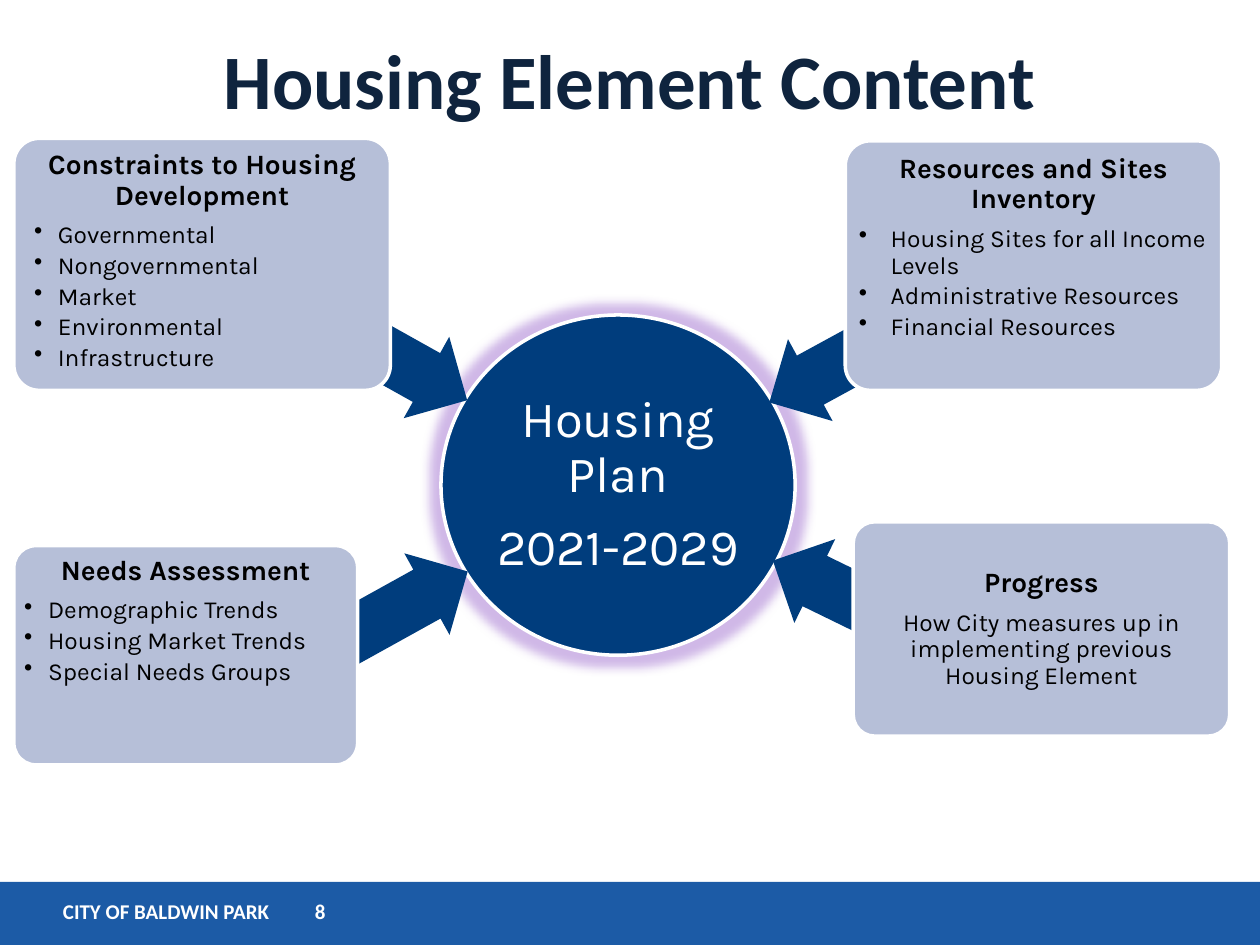
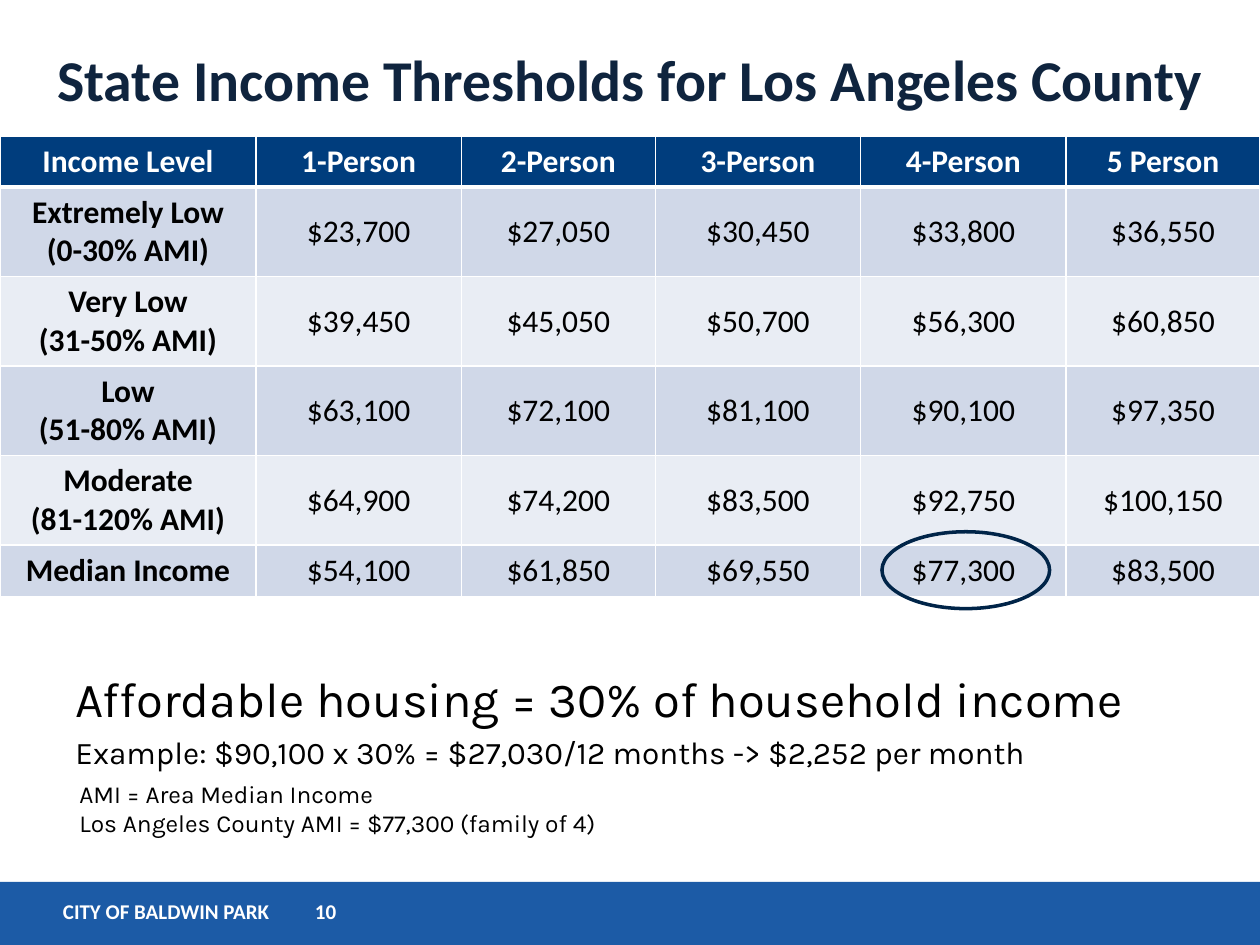
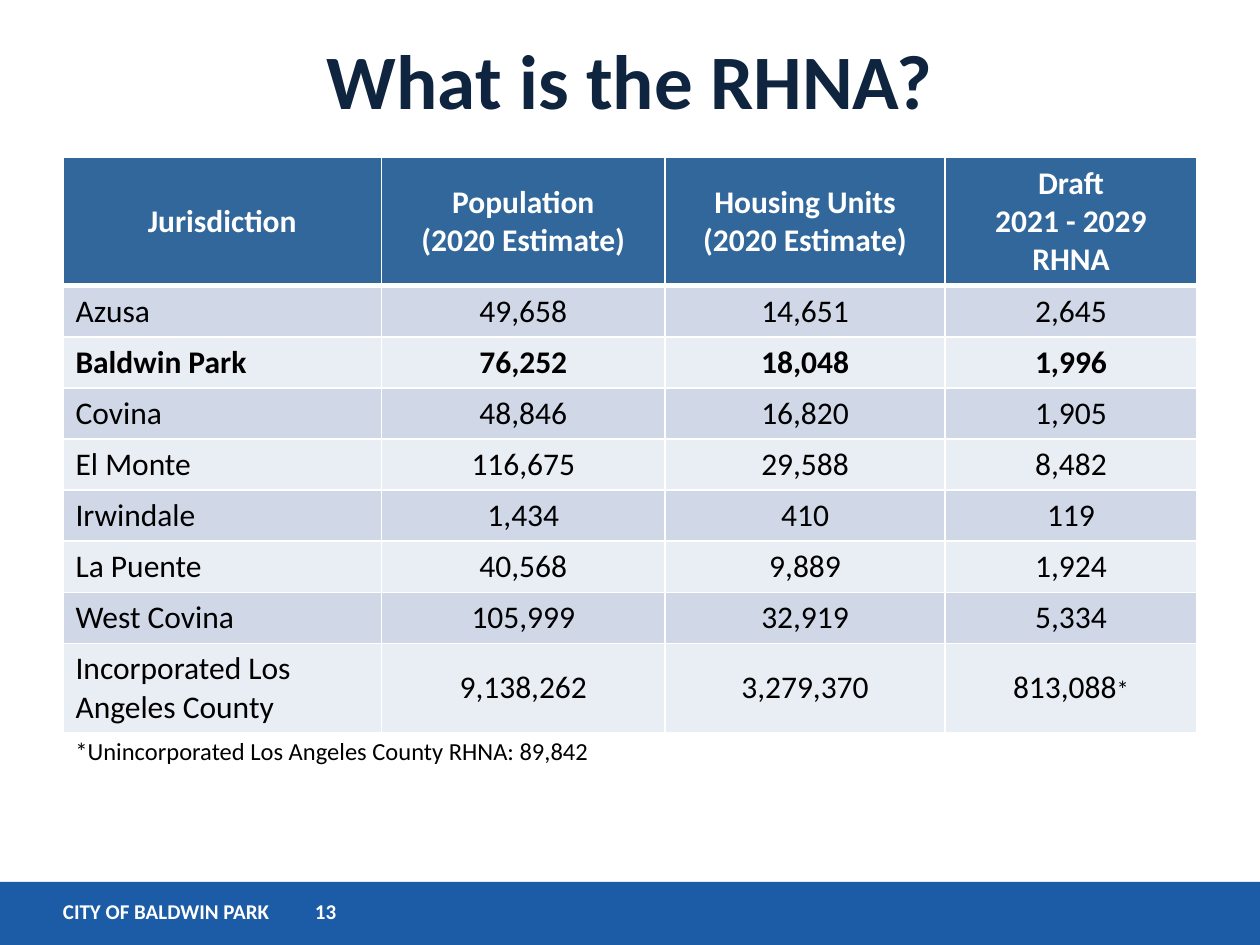
from lxml.etree import SubElement
from pptx import Presentation
from pptx.dml.color import RGBColor
from pptx.enum.shapes import MSO_SHAPE as SHAPE
from pptx.enum.text import MSO_ANCHOR as ANCHOR, MSO_AUTO_SIZE as AUTOSIZE, PP_ALIGN as ALIGN
from pptx.oxml.ns import qn
from pptx.util import Cm, Pt

NAVY, TITLE, BAND = "003D7D", "0F243E", "1C5BA6"
STEEL, CARD, RING, GLOW = "31679B", "B6BFD8", "002448", "8A4FC4"
ROWS = ("D0D8E8", "E9EDF4")
WHITE, BLACK = "FFFFFF", "000000"
HEAD_FONT, BODY_FONT = "Calibri", "Karla"


def rgb(value):
    return RGBColor.from_string(value)


def solid_xml(parent, color):
    return SubElement(SubElement(parent, qn("a:solidFill")), qn("a:srgbClr"), val=color)


def add_run(p, text, size=18, font=BODY_FONT, color=BLACK, bold=False):
    r = p.add_run()
    r.text = text
    r.font.size, r.font.name, r.font.bold = Pt(size), font, bold
    r.font.color.rgb = rgb(color)


def add_text(tf, text, align=ALIGN.LEFT, line=None, before=0, after=0,
             bullet=None, indent=0, hang=0, tab=None, **font):
    """Add one paragraph, using the first one while it is empty."""
    p = tf.paragraphs[0] if not tf.text else tf.add_paragraph()
    p.alignment, p.line_spacing = align, line
    p.space_before, p.space_after = Pt(before), Pt(after)
    ppr = p._p.get_or_add_pPr()
    ppr.set("marL", str(Cm(indent)))
    ppr.set("indent", str(-Cm(hang)))
    if bullet:
        SubElement(ppr, qn("a:buChar"), char=bullet)
    else:
        SubElement(ppr, qn("a:buNone"))
    if tab:
        SubElement(SubElement(ppr, qn("a:tabLst")), qn("a:tab"), pos=str(Cm(tab)), algn="l")
    add_run(p, text, **font)
    return p


class Deck:
    def __init__(self):
        self.prs = Presentation()
        self.prs.slide_width, self.prs.slide_height = Cm(25.4), Cm(19.05)
        self.s = None

    def place(self, sp, box):
        sp.left, sp.top, sp.width, sp.height = (Cm(v) for v in box)

    def frame(self, sp, inset=(0.25, 0.13), anchor=ANCHOR.TOP, wrap=True):
        tf = sp.text_frame
        tf.word_wrap, tf.auto_size, tf.vertical_anchor = wrap, AUTOSIZE.NONE, anchor
        tf.margin_left = tf.margin_right = Cm(inset[0])
        tf.margin_top = tf.margin_bottom = Cm(inset[1])
        return tf

    def slide(self, title, number, size=44, box=(1.27, 0, 22.86, 3.18), layout=5):
        self.s = self.prs.slides.add_slide(self.prs.slide_layouts[layout])
        self.shape(SHAPE.RECTANGLE, (0, 17.78, 25.4, 1.27), fill=BAND)
        footer = self.textbox((0, 17.98, 8.46, 0.76), inset=(1.27, 0.13))
        add_text(footer, f"CITY OF BALDWIN PARK\t{number}", size=12, font=HEAD_FONT,
                 color=WHITE, bold=True, tab=4.65)
        sp = self.s.shapes.title
        self.place(sp, box)
        add_text(self.frame(sp, anchor=ANCHOR.MIDDLE), title, align=ALIGN.CENTER,
                 size=size, font=HEAD_FONT, color=TITLE, bold=True)

    def body(self, box):
        sp = self.s.placeholders[1]
        self.place(sp, box)
        return self.frame(sp)

    def textbox(self, box, **frame):
        return self.frame(self.s.shapes.add_textbox(*(Cm(v) for v in box)), **frame)

    def shape(self, kind, box, fill=None, line=None, adjust=(), rotation=0):
        sp = self.s.shapes.add_shape(kind, *(Cm(v) for v in box))
        sp.shadow.inherit = False
        sp.rotation = rotation
        for i, value in enumerate(adjust):
            sp.adjustments[i] = value
        if fill:
            sp.fill.solid()
            sp.fill.fore_color.rgb = rgb(fill)
        else:
            sp.fill.background()
        if line:
            sp.line.color.rgb, sp.line.width = rgb(line), Pt(2)
        else:
            sp.line.fill.background()
        return sp

    def glow(self, sp, color, radius):
        effects = sp._element.spPr.find(qn("a:effectLst"))
        glow = SubElement(effects, qn("a:glow"), rad=str(Pt(radius)))
        clr = SubElement(glow, qn("a:srgbClr"), val=color)
        SubElement(clr, qn("a:alpha"), val="40000")

    def card(self, box, heading, items, inset, bullet="•", indent=0.0, hang=0.0):
        sp = self.shape(SHAPE.ROUNDED_RECTANGLE, box, CARD, WHITE, adjust=(0.1,))
        tf = self.frame(sp, (inset, inset), ANCHOR.TOP if bullet else ANCHOR.MIDDLE)
        add_text(tf, heading, align=ALIGN.CENTER, line=0.9, after=6.5, size=16, bold=True)
        for item in items:
            add_text(tf, item, align=ALIGN.LEFT if bullet else ALIGN.CENTER, line=0.9,
                     after=2.4 if bullet else 5.7, bullet=bullet, indent=indent,
                     hang=hang, size=14)

    def cell(self, cell, text, fill, bottom=1, **fmt):
        tcpr = cell._tc.get_or_add_tcPr()
        for side, width in (("L", 1), ("R", 1), ("T", 1), ("B", bottom)):
            solid_xml(SubElement(tcpr, qn(f"a:ln{side}"), w=str(Pt(width))), WHITE)
        cell.fill.solid()
        cell.fill.fore_color.rgb = rgb(fill)
        cell.vertical_anchor = ANCHOR.MIDDLE
        for part in text.split("\n"):
            add_text(cell.text_frame, part, font=HEAD_FONT, **fmt)

    def table(self, left, top, widths, heights, rows, head_fill, is_bold, first_align):
        frame = self.s.shapes.add_table(len(rows), len(widths), Cm(left), Cm(top),
                                        Cm(sum(widths)), Cm(sum(heights)))
        table = frame.table
        for col, width in zip(table.columns, widths):
            col.width = Cm(width)
        for i, (row, height) in enumerate(zip(rows, heights)):
            table.rows[i].height = Cm(height)
            for j, text in enumerate(row):
                cell = table.cell(i, j)
                if i == 0:
                    self.cell(cell, text, head_fill, bottom=3, align=ALIGN.CENTER,
                              color=WHITE, bold=True)
                else:
                    self.cell(cell, text, ROWS[(i - 1) % 2], bold=is_bold(i, j),
                              align=ALIGN.CENTER if j else first_align)
        return table


def content_slide(deck):
    deck.slide("Housing Element Content", 8)

    # Central plan
    plan = deck.shape(SHAPE.OVAL, (8.89, 6.35, 7.14, 6.86), NAVY, WHITE)
    deck.glow(plan, GLOW, 11)
    tf = deck.frame(plan, (0, 0), ANCHOR.MIDDLE)
    for text in ("Housing Plan", "2021-2029"):
        add_text(tf, text, align=ALIGN.CENTER, line=0.9, after=10.2, size=29, color=WHITE)

    # Arrows towards the plan
    for left, top, width, angle in ((4.17, 11.94, 5.61, 151), (3.78, 5.66, 6.02, 209.2),
                                    (15.14, 5.72, 6.07, 331.4), (15.27, 11.71, 6.15, 26)):
        deck.shape(SHAPE.LEFT_ARROW, (left, top, width, 1.88), NAVY,
                   adjust=(0.6, 0.5), rotation=angle)

    # Cards around it
    deck.card((0.28, 11, 6.93, 4.42), "Needs Assessment",
              ("Demographic Trends", "Housing Market Trends", "Special Needs Groups"),
              inset=0.08, indent=0.48, hang=0.48)
    deck.card((0.28, 2.79, 7.59, 5.08), "Constraints to Housing Development",
              ("Governmental", "Nongovernmental", "Market", "Environmental",
               "Infrastructure"),
              inset=0.1, indent=0.64, hang=0.48)
    deck.card((17.04, 2.84, 7.59, 5.03), "Resources and Sites Inventory",
              ("Housing Sites for all Income Levels", "Administrative Resources",
               "Financial Resources"),
              inset=0.13, indent=0.64, hang=0.64)
    deck.card((17.2, 10.52, 7.59, 4.32), "Progress",
              ("How City measures up in implementing previous Housing Element",),
              inset=0.13, bullet=None)


def income_slide(deck):
    deck.slide("State Income Thresholds for Los Angeles County", 10, size=33,
               box=(0, 0, 25.4, 3.18), layout=1)

    # Income table
    rows = (
        ("Income Level", "1-Person", "2-Person", "3-Person", "4-Person", "5 Person"),
        ("Extremely Low\n(0-30% AMI)", "$23,700", "$27,050", "$30,450", "$33,800", "$36,550"),
        ("Very Low\n(31-50% AMI)", "$39,450", "$45,050", "$50,700", "$56,300", "$60,850"),
        ("Low\n(51-80% AMI)", "$63,100", "$72,100", "$81,100", "$90,100", "$97,350"),
        ("Moderate\n(81-120% AMI)", "$64,900", "$74,200", "$83,500", "$92,750", "$100,150"),
        ("Median Income", "$54,100", "$61,850", "$69,550", "$77,300", "$83,500"),
    )
    deck.table(0, 2.74, (5.16, 4.14, 3.91, 4.14, 4.14, 3.91),
               (1.03, *[1.8] * 4, 1.03), rows, NAVY,
               is_bold=lambda i, j: j == 0, first_align=ALIGN.CENTER)
    deck.shape(SHAPE.OVAL, (17.78, 10.72, 3.38, 1.55), line=RING)

    # Affordability rule and notes
    tf = deck.body((1.27, 13.34, 22.86, 4.4))
    add_text(tf, "Affordable housing = 30% of household income", before=5.6, size=28)
    add_text(tf, "Example: $90,100 x 30% = $27,030/12 months -> $2,252 per month", before=3.6)
    tf = deck.textbox((1.35, 15.57, 17.98, 1.45))
    for text in ("AMI = Area Median Income", "Los Angeles County AMI = $77,300 (family of 4)"):
        add_text(tf, text, size=14)


def rhna_slide(deck):
    deck.slide("What is the RHNA?", 13)

    # Jurisdiction table
    rows = (
        ("Jurisdiction", "Population\n(2020 Estimate)", "Housing Units (2020 Estimate)",
         "Draft\n2021 - 2029\nRHNA"),
        ("Azusa", "49,658", "14,651", "2,645"),
        ("Baldwin Park", "76,252", "18,048", "1,996"),
        ("Covina", "48,846", "16,820", "1,905"),
        ("El Monte", "116,675", "29,588", "8,482"),
        ("Irwindale", "1,434", "410", "119"),
        ("La Puente", "40,568", "9,889", "1,924"),
        ("West Covina", "105,999", "32,919", "5,334"),
        ("Incorporated Los Angeles County", "9,138,262", "3,279,370", "813,088"),
    )
    table = deck.table(1.27, 3.18, (6.42, 5.72, 5.64, 5.08), (2.56, *[1.03] * 7, 1.8),
                       rows, STEEL, is_bold=lambda i, j: rows[i][0] == "Baldwin Park",
                       first_align=ALIGN.LEFT)
    county_total = table.cell(len(rows) - 1, 3).text_frame.paragraphs[0]
    add_run(county_total, "*", size=14, font=HEAD_FONT)

    # Footnote
    tf = deck.textbox((1.27, 14.71, 10.95, 0.86), wrap=False)
    add_text(tf, "*Unincorporated Los Angeles County RHNA: 89,842", size=14, font=HEAD_FONT)


def main():
    deck = Deck()
    content_slide(deck)
    income_slide(deck)
    rhna_slide(deck)
    deck.prs.save("out.pptx")


if __name__ == "__main__":
    main()
